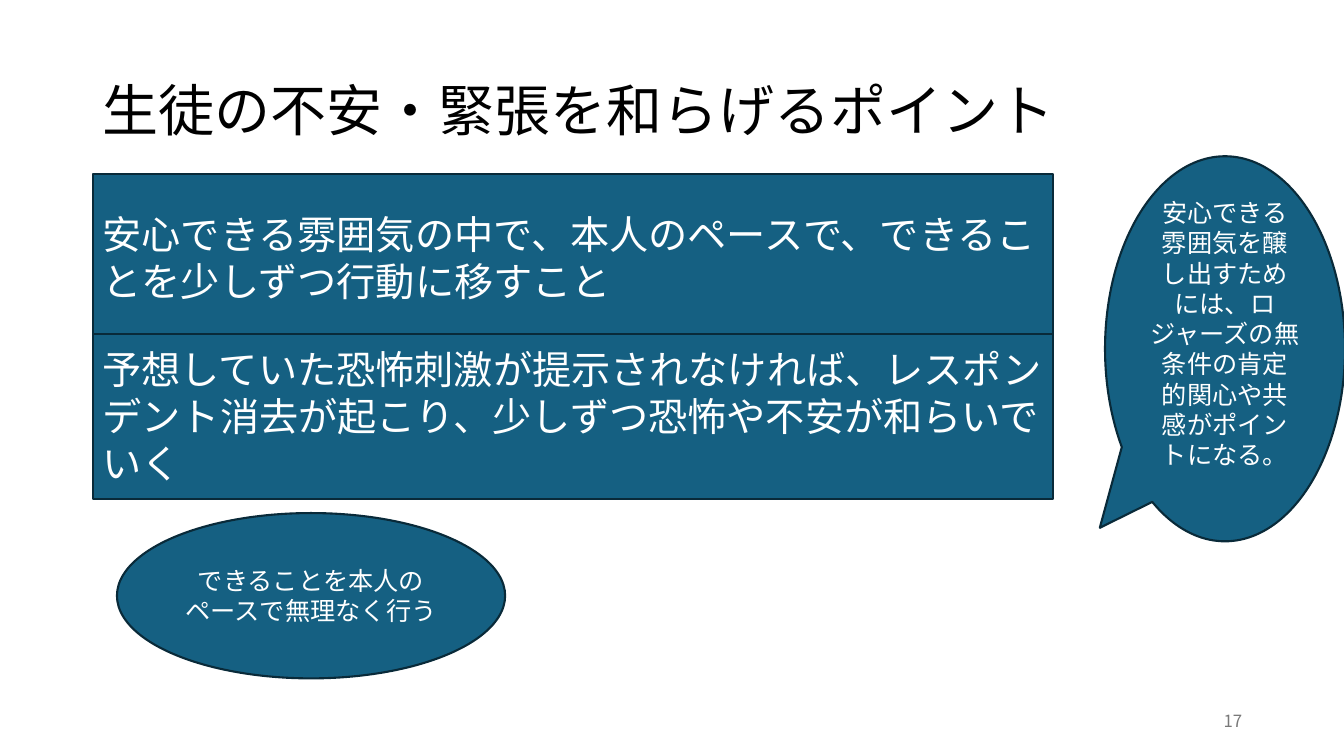
"""Build the slide on easing students' anxiety and tension."""
from lxml import etree
from pptx import Presentation
from pptx.dml.color import RGBColor
from pptx.enum import shapes, text
from pptx.oxml.ns import qn
from pptx.util import Inches, Pt

FONT = "Noto Sans CJK JP"
COLORS = {"fill": "156082", "line": "092A39", "light": "FFFFFF",
          "title": "000000", "number": "797979"}
TITLE = "生徒の不安・緊張を和らげるポイント"
PAGE = "17"
LEFT, CENTER, RIGHT = text.PP_ALIGN.LEFT, text.PP_ALIGN.CENTER, text.PP_ALIGN.RIGHT
KIND = shapes.MSO_SHAPE
PANELS = [
    (KIND.RECTANGLE, (0.92, 1.73, 9.52, 1.64), 28, LEFT,
     "安心できる雰囲気の中で、本人のペースで、できることを少しずつ行動に移すこと"),
    (KIND.RECTANGLE, (0.92, 3.31, 9.52, 1.64), 28, LEFT,
     "予想していた恐怖刺激が提示されなければ、レスポンデント消去が起こり、"
     "少しずつ恐怖や不安が和らいでいく"),
    (KIND.OVAL, (1.16, 5.09, 3.85, 1.64), 18, CENTER,
     "できることを本人のペースで無理なく行う"),
    (KIND.OVAL_CALLOUT, (10.96, 1.55, 2.38, 3.82), 18, CENTER,
     "安心できる雰囲気を醸し出すためには、ロジャーズの無条件の肯定的関心や共感がポイントになる。"),
]
CALLOUT_TAIL = (-0.522, 0.465)


def rgb(name):
    return RGBColor.from_string(COLORS[name])


def write(sp, words, size, color, align):
    tf = sp.text_frame
    tf.word_wrap = True
    tf.vertical_anchor = text.MSO_ANCHOR.MIDDLE
    p = tf.paragraphs[0]
    p.text = words
    p.alignment = align
    p.font.size = Pt(size)
    p.font.color.rgb = rgb(color)
    p.font.name = FONT
    props = p._p.pPr.find(qn("a:defRPr"))
    etree.SubElement(props, qn("a:ea")).set("typeface", FONT)
    return tf


def add_panel(s, kind, box, size, align, words):
    sp = s.shapes.add_shape(kind, *map(Inches, box))
    sp.shadow.inherit = False
    sp.fill.solid()
    sp.fill.fore_color.rgb = rgb("fill")
    sp.line.color.rgb = rgb("line")
    sp.line.width = Pt(1.5)
    tf = write(sp, words, size, "light", align)
    if kind == KIND.OVAL_CALLOUT:
        for i, offset in enumerate(CALLOUT_TAIL):
            sp.adjustments[i] = offset
        tf.margin_bottom = Inches(0.35)


def main():
    prs = Presentation()
    prs.slide_width, prs.slide_height = Inches(13.33), Inches(7.5)
    s = prs.slides.add_slide(prs.slide_layouts[5])
    title = s.shapes.title
    title.left, title.top, title.width, title.height = map(Inches, (0.92, 0.4, 11.5, 1.45))
    tf = write(title, TITLE, 40, "title", LEFT)
    tf.paragraphs[0].line_spacing = 0.9
    for panel in PANELS:
        add_panel(s, *panel)
    number = s.shapes.add_textbox(*map(Inches, (9.42, 6.95, 3, 0.4)))
    write(number, PAGE, 12, "number", RIGHT)
    prs.save("out.pptx")


if __name__ == "__main__":
    main()
